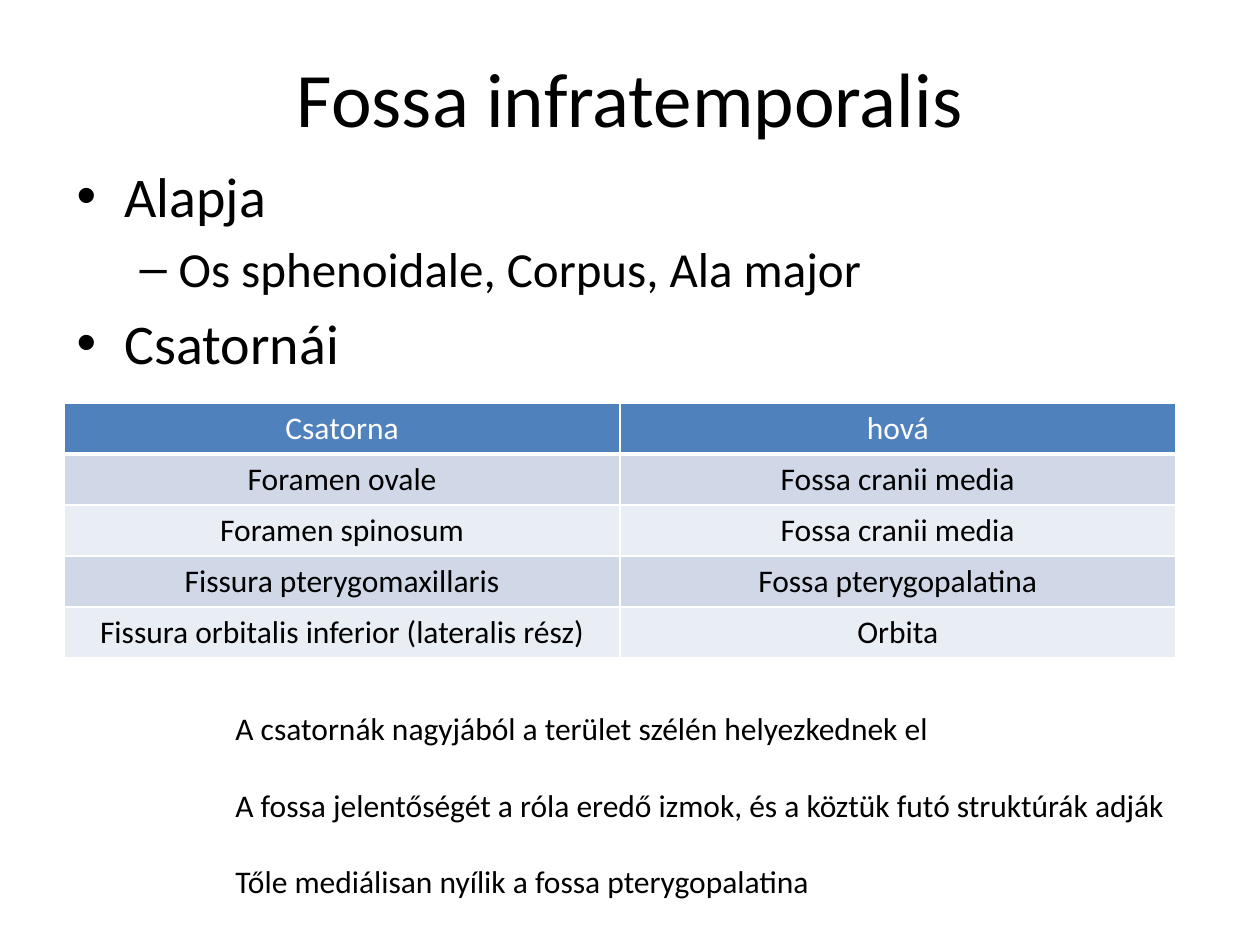
from lxml import etree
from pptx import Presentation
from pptx.dml.color import RGBColor
from pptx.enum.text import MSO_ANCHOR, PP_ALIGN
from pptx.oxml.ns import qn
from pptx.util import Inches, Pt

FONT = "Calibri"
BLACK, WHITE = "000000", "FFFFFF"
HEADER_FILL = "4F81BD"
BAND_FILLS = ("D0D8E8", "E9EDF4")

# level: bullet, text size, left indent, hanging indent
OUTLINE_LEVELS = [("•", 32, 0.38, 0.38), ("–", 28, 0.81, 0.31)]
OUTLINE = [(0, "Alapja"), (1, "Os sphenoidale, Corpus, Ala major"), (0, "Csatornái")]
CHANNELS = [
    ("Csatorna", "hová"),
    ("Foramen ovale", "Fossa cranii media"),
    ("Foramen spinosum", "Fossa cranii media"),
    ("Fissura pterygomaxillaris", "Fossa pterygopalatina"),
    ("Fissura orbitalis inferior (lateralis rész)", "Orbita"),
]
NOTES = [
    "A csatornák nagyjából a terület szélén helyezkednek el",
    "A fossa jelentőségét a róla eredő izmok, és a köztük futó struktúrák adják",
    "Tőle mediálisan nyílik a fossa pterygopalatina",
]


def color(value):
    return RGBColor.from_string(value)


def box(*lengths):
    return [Inches(length) for length in lengths]


def add_run(paragraph, text, size, fill=BLACK):
    run = paragraph.add_run()
    run.text = text
    run.font.name = FONT
    run.font.size = Pt(size)
    run.font.bold = False
    run.font.color.rgb = color(fill)


def next_paragraph(frame, index):
    return frame.paragraphs[0] if index == 0 else frame.add_paragraph()


def set_bullet(paragraph, character, left, hanging):
    properties = paragraph._p.get_or_add_pPr()
    properties.set("marL", str(Inches(left)))
    properties.set("indent", str(-Inches(hanging)))
    font = etree.SubElement(properties, qn("a:buFont"))
    font.set("typeface", "Arial")
    bullet = etree.SubElement(properties, qn("a:buChar"))
    bullet.set("char", character)


def set_borders(cell, bottom):
    """Draw white borders; they must precede the cell's fill in the XML."""
    properties = cell._tc.get_or_add_tcPr()
    for index, (side, width) in enumerate(
        [("lnL", 1), ("lnR", 1), ("lnT", 1), ("lnB", bottom)]
    ):
        line = etree.Element(qn(f"a:{side}"), w=str(Pt(width)))
        fill = etree.SubElement(line, qn("a:solidFill"))
        etree.SubElement(fill, qn("a:srgbClr"), val=WHITE)
        properties.insert(index, line)


def place_title(slide, left, top, width, height):
    title = slide.shapes.title
    title.left, title.top, title.width, title.height = left, top, width, height
    frame = title.text_frame
    frame.vertical_anchor = MSO_ANCHOR.MIDDLE
    paragraph = frame.paragraphs[0]
    paragraph.alignment = PP_ALIGN.CENTER
    add_run(paragraph, "Fossa infratemporalis", 44)


def add_outline(slide, left, top, width, height):
    frame = slide.shapes.add_textbox(left, top, width, height).text_frame
    frame.word_wrap = True
    for index, (level, text) in enumerate(OUTLINE):
        bullet, size, indent, hanging = OUTLINE_LEVELS[level]
        paragraph = next_paragraph(frame, index)
        paragraph.level = level
        paragraph.space_before = Pt(size * 0.2)
        set_bullet(paragraph, bullet, indent, hanging)
        add_run(paragraph, text, size)


def add_channel_table(slide, left, top, width, height):
    table = slide.shapes.add_table(
        len(CHANNELS), len(CHANNELS[0]), left, top, width, height
    ).table
    for row, texts in enumerate(CHANNELS):
        is_header = row == 0
        for column, text in enumerate(texts):
            cell = table.cell(row, column)
            cell.fill.solid()
            cell.fill.fore_color.rgb = color(
                HEADER_FILL if is_header else BAND_FILLS[(row - 1) % 2]
            )
            set_borders(cell, bottom=3 if is_header else 1)
            paragraph = cell.text_frame.paragraphs[0]
            paragraph.alignment = PP_ALIGN.CENTER
            add_run(paragraph, text, 18, WHITE if is_header else BLACK)


def add_notes(slide, left, top, width, height):
    frame = slide.shapes.add_textbox(left, top, width, height).text_frame
    frame.word_wrap = False
    for index, text in enumerate(NOTES):
        paragraph = next_paragraph(frame, index)
        if index:
            paragraph.space_before = Pt(22)
        add_run(paragraph, text, 18)


def main():
    presentation = Presentation()
    presentation.slide_width, presentation.slide_height = box(10, 7.5)
    slide = presentation.slides.add_slide(presentation.slide_layouts[5])
    place_title(slide, *box(0.5, 0.3, 9, 0.93))
    add_outline(slide, *box(0.51, 1.23, 9, 2.13))
    add_channel_table(slide, *box(0.51, 3.2, 8.82, 2.02))
    add_notes(slide, *box(1.77, 5.58, 7.65, 1.62))
    presentation.save("out.pptx")


if __name__ == "__main__":
    main()
